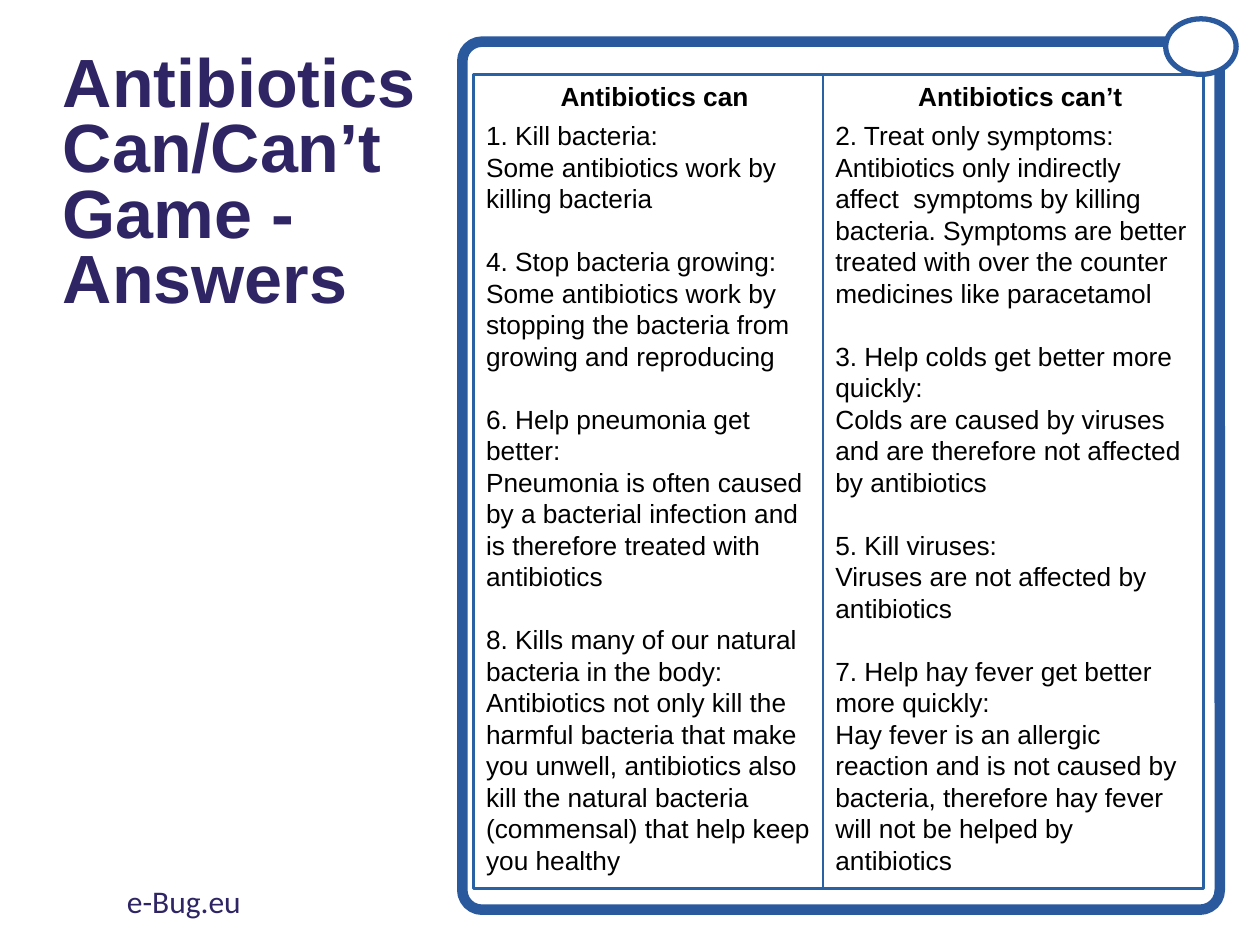
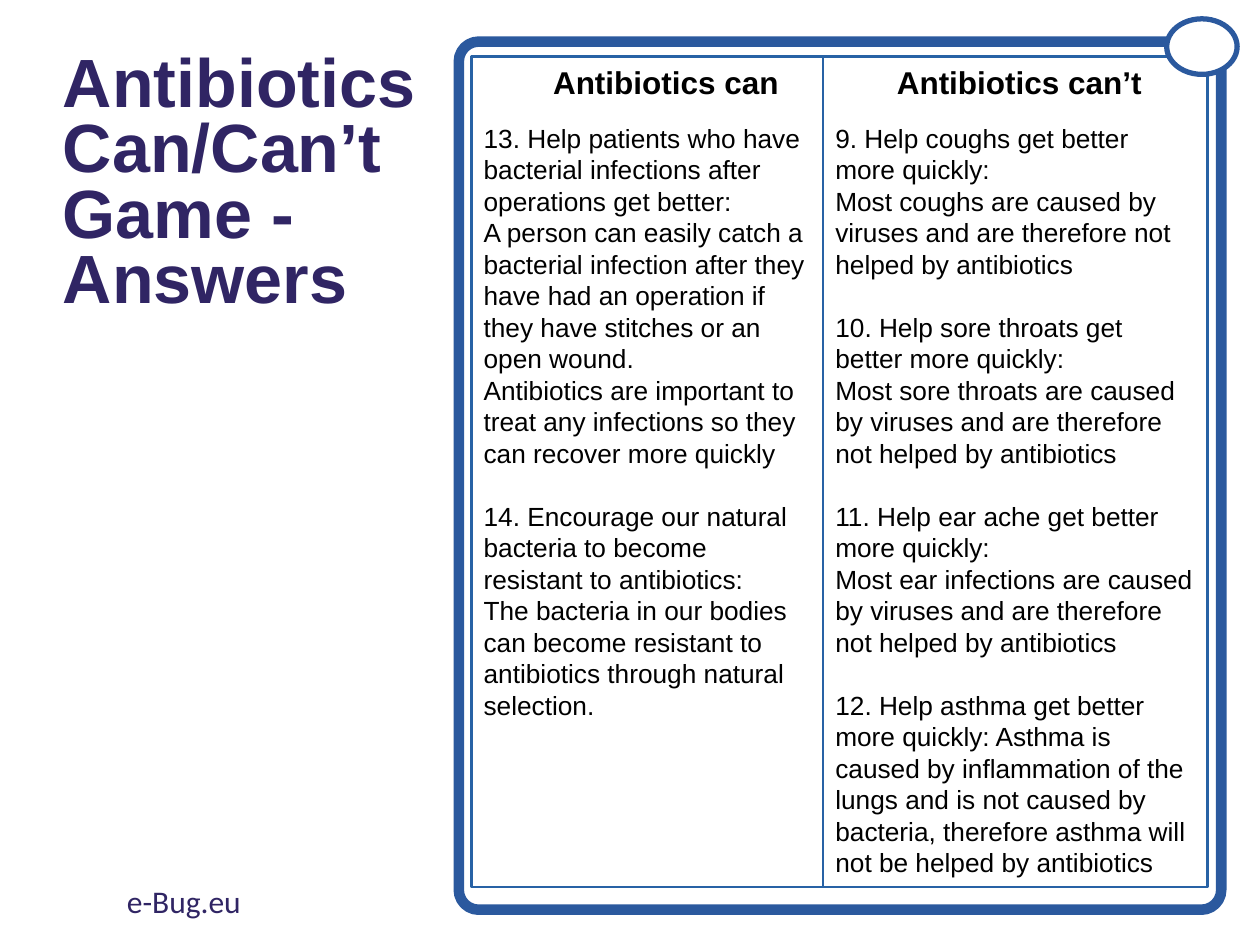
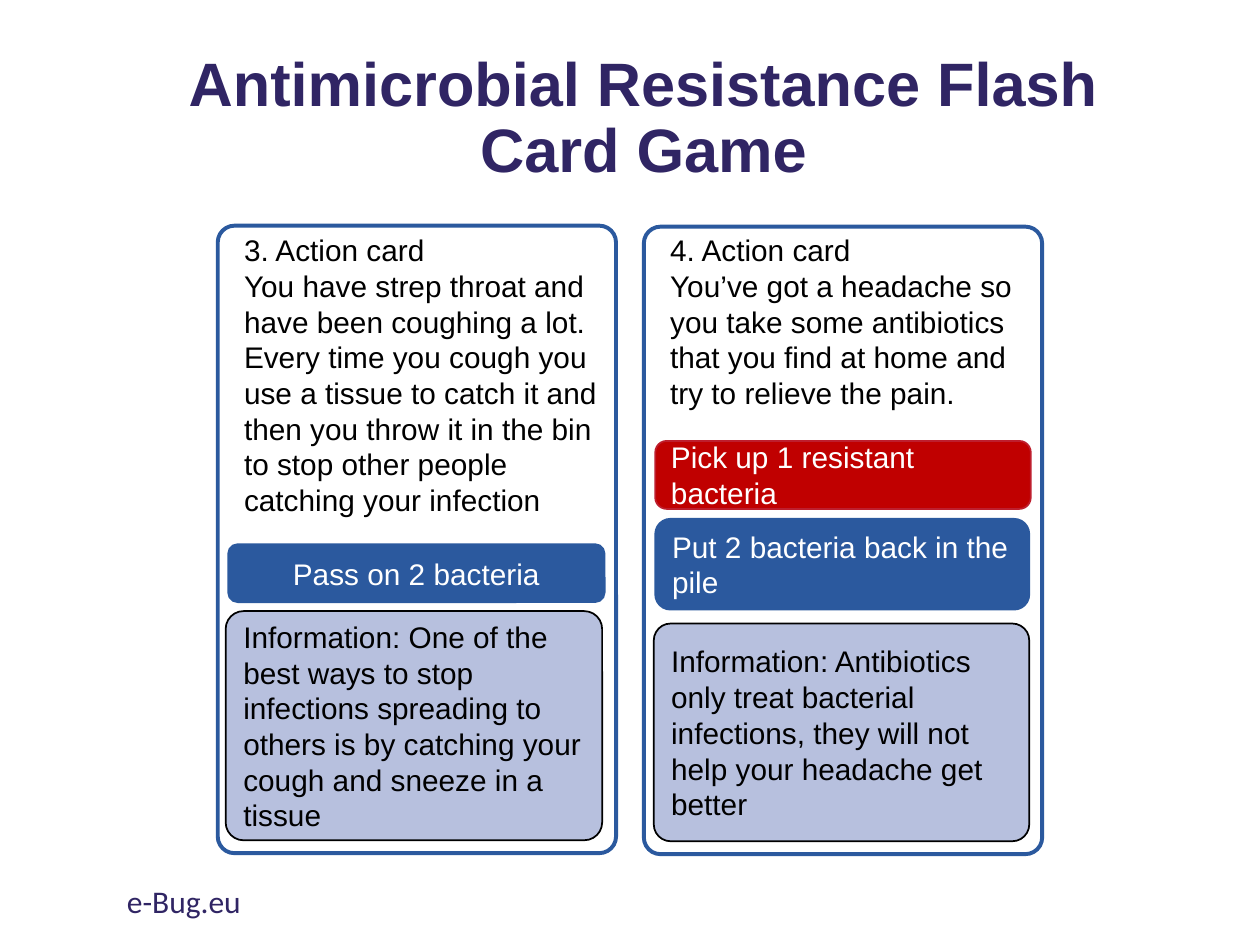
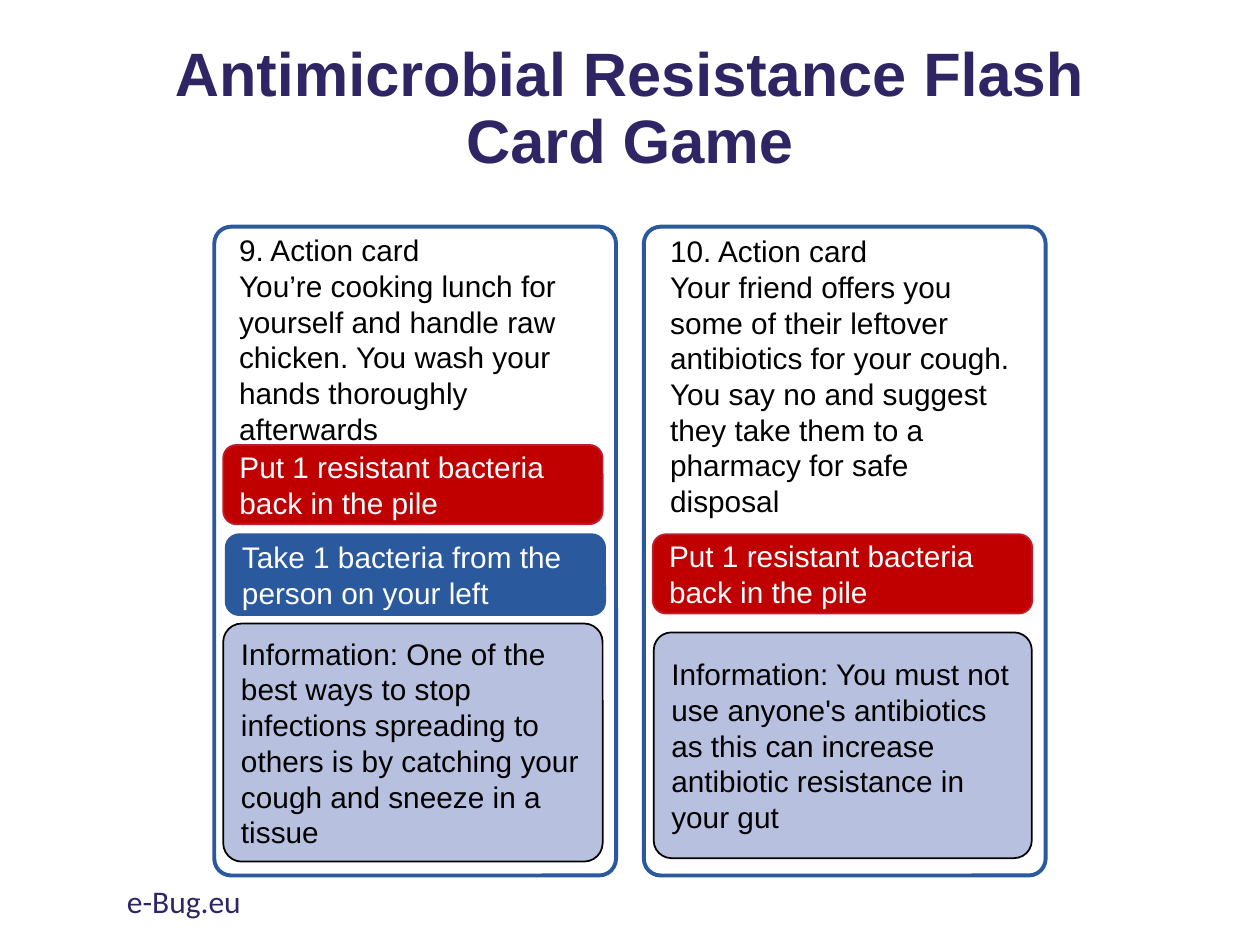
from pptx import Presentation
from pptx.dml.color import RGBColor
from pptx.enum.shapes import MSO_SHAPE
from pptx.enum.text import MSO_ANCHOR, MSO_AUTO_SIZE, PP_ALIGN
from pptx.util import Cm, Pt

RECT, ROUND, OVAL = MSO_SHAPE.RECTANGLE, MSO_SHAPE.ROUNDED_RECTANGLE, MSO_SHAPE.OVAL
TOP, MIDDLE = MSO_ANCHOR.TOP, MSO_ANCHOR.MIDDLE
LEFT, CENTER = PP_ALIGN.LEFT, PP_ALIGN.CENTER
GROW = MSO_AUTO_SIZE.SHAPE_TO_FIT_TEXT

NAVY, BLUE, GRID_BLUE = "302564", "2B599E", "2862A5"
RED, RED_LINE, LILAC = "C00000", "BE1E2D", "B7C0DE"
BLACK, WHITE = "000000", "FFFFFF"

BOX_STYLES = {  # fill, line, text colour, corner
    "red": (RED, RED_LINE, WHITE, 0.167),
    "blue": (BLUE, BLUE, WHITE, 0.167),
    "info": (LILAC, BLACK, BLACK, 0.078),
}


def rgb(value):
    return RGBColor.from_string(value)


class Deck:
    """Holds the presentation, its shared style and the current slide."""

    def __init__(self):
        self.prs = Presentation()
        self.prs.slide_width, self.prs.slide_height = Cm(25.4), Cm(19.05)
        self.s = None

    def new_slide(self):
        self.s = self.prs.slides.add_slide(self.prs.slide_layouts[6])

    def fill_text(self, tf, paragraphs, size, color=BLACK, bold=False, font="Arial",
                  align=LEFT, anchor=TOP, spacing=None, gap=0):
        """Fill a text frame; gap is the space in points between paragraphs."""
        tf.word_wrap = True
        tf.vertical_anchor = anchor
        for i, text in enumerate(paragraphs):
            p = tf.add_paragraph() if i else tf.paragraphs[0]
            p.text = text
            p.alignment = align
            if spacing:
                p.line_spacing = spacing
            if i and gap:
                p.space_before = Pt(gap)
            p.font.name, p.font.size, p.font.bold = font, Pt(size), bold
            p.font.color.rgb = rgb(color)

    def text(self, at, paragraphs, size, **style):
        tf = self.s.shapes.add_textbox(*map(Cm, at)).text_frame
        self.fill_text(tf, paragraphs, size, **style)
        return tf

    def shape(self, kind, at, line, width, fill=None, corner=None):
        sp = self.s.shapes.add_shape(kind, *map(Cm, at))
        sp.shadow.inherit = False
        if fill:
            sp.fill.solid()
            sp.fill.fore_color.rgb = rgb(fill)
        else:
            sp.fill.background()
        sp.line.color.rgb = rgb(line)
        sp.line.width = Pt(width)
        if corner:
            sp.adjustments[0] = corner
        return sp

    def title(self, at, text, size, align, spacing):
        self.text(at, [text], size, color=NAVY, bold=True, align=align,
                  anchor=MIDDLE, spacing=spacing)

    def footer(self):
        self.text((2.31, 17.65, 8.59, 1.02), ["e-Bug.eu"], 18, color=NAVY, font="Calibri")

    def column(self, at, header, header_at, header_size, inset, answers):
        tf = self.text(header_at, [header], header_size, bold=True)
        tf.word_wrap = False
        tf.auto_size = GROW
        tf = self.shape(RECT, at, GRID_BLUE, 1.5).text_frame
        tf.margin_top = Cm(inset)
        self.fill_text(tf, answers, 15, gap=18)

    def frame(self, left, width, oval_left):
        self.shape(ROUND, (left, 0.84, width, 17.5), BLUE, 6, corner=0.026)
        self.shape(OVAL, (oval_left, 0.38, 1.42, 1.12), BLUE, 3, fill=WHITE)

    def card(self, at, text_at, lines, boxes):
        self.shape(ROUND, at, BLUE, 2.25, corner=0.042)
        self.text(text_at, lines, 17).auto_size = GROW
        for style, box_at, text, align in boxes:
            fill, line, color, corner = BOX_STYLES[style]
            sp = self.shape(ROUND, box_at, line, 1, fill, corner)
            self.fill_text(sp.text_frame, [text], 17, color=color, align=align,
                           anchor=MIDDLE)

    def answers_slide(self, top, height, header_size, header_height, inset, columns, frame):
        self.new_slide()
        self.title((1.02, 0.74, 8.31, 6.02), "Antibiotics Can/Can’t Game - Answers",
                   39, LEFT, 0.8)
        for header, left, width, header_left, header_width, answers in columns:
            self.column((left, top, width, height), header,
                        (header_left, top, header_width, header_height),
                        header_size, inset, answers)
        self.frame(*frame)
        self.footer()

    def cards_slide(self, title_left, title_top, cards):
        self.new_slide()
        self.title((title_left, title_top, 21.89, 3.68),
                   "Antimicrobial Resistance Flash Card Game", 35, CENTER, 0.9)
        for card in cards:
            self.card(*card)
        self.footer()


CAN, CANT = "Antibiotics can", "Antibiotics can’t"
COUGH_INFO = ("Information: One of the best ways to stop infections spreading to others "
              "is by catching your cough and sneeze in a tissue")
PUT_BACK = "Put 1 resistant bacteria back in the pile"

CAN_1 = [
    "1. Kill bacteria:\nSome antibiotics work by killing bacteria",
    "4. Stop bacteria growing:\nSome antibiotics work by stopping the bacteria from "
    "growing and reproducing",
    "6. Help pneumonia get better:\nPneumonia is often caused by a bacterial infection "
    "and is therefore treated with antibiotics",
    "8. Kills many of our natural bacteria in the body:\nAntibiotics not only kill the "
    "harmful bacteria that make you unwell, antibiotics also kill the natural bacteria "
    "(commensal) that help keep you healthy",
]
CANT_1 = [
    "2. Treat only symptoms:\nAntibiotics only indirectly affect  symptoms by killing "
    "bacteria. Symptoms are better treated with over the counter medicines like paracetamol",
    "3. Help colds get better more quickly:\nColds are caused by viruses and are "
    "therefore not affected by antibiotics",
    "5. Kill viruses:\nViruses are not affected by antibiotics",
    "7. Help hay fever get better more quickly:\nHay fever is an allergic reaction and is "
    "not caused by bacteria, therefore hay fever will not be helped by antibiotics",
]
CAN_2 = [
    "13. Help patients who have bacterial infections after operations get better:\n"
    "A person can easily catch a bacterial infection after they have had an operation if "
    "they have stitches or an open wound.\nAntibiotics are important to treat any "
    "infections so they can recover more quickly",
    "14. Encourage our natural bacteria to become resistant to antibiotics:\n"
    "The bacteria in our bodies can become resistant to antibiotics through natural selection.",
]
CANT_2 = [
    f"{number}. Help {illness} get better more quickly:\nMost {cases} are caused by viruses "
    "and are therefore not helped by antibiotics"
    for number, illness, cases in [(9, "coughs", "coughs"),
                                   (10, "sore throats", "sore throats"),
                                   (11, "ear ache", "ear infections")]
] + [
    "12. Help asthma get better more quickly: Asthma is caused by inflammation of the lungs "
    "and is not caused by bacteria, therefore asthma will not be helped by antibiotics",
]

CARDS_3 = [
    ((4.39, 4.55, 8.03, 12.65), (4.67, 4.55, 7.98, 6.07),
     ["3. Action card",
      "You have strep throat and have been coughing a lot. Every time you cough you use a "
      "tissue to catch it and then you throw it in the bin to stop other people catching "
      "your infection"],
     [("blue", (4.6, 10.97, 7.59, 1.17), "Pass on 2 bacteria", CENTER),
      ("info", (4.55, 12.32, 7.59, 4.62), COUGH_INFO, LEFT)]),
    ((12.98, 4.57, 8.03, 12.65), (13.26, 4.55, 7.47, 3.89),
     ["4. Action card",
      "You’ve got a headache so you take some antibiotics that you find at home and try to "
      "relieve the pain."],
     [("red", (13.21, 8.89, 7.57, 1.37), "Pick up 1 resistant bacteria", LEFT),
      ("blue", (13.21, 10.46, 7.54, 1.83), "Put 2 bacteria back in the pile", LEFT),
      ("info", (13.18, 12.57, 7.57, 4.39),
       "Information: Antibiotics only treat bacterial infections, they will not help your "
       "headache get better", LEFT)]),
]
CARDS_4 = [
    ((4.32, 4.57, 8.1, 13.08), (4.57, 4.55, 8.05, 4.62),
     ["9. Action card",
      "You’re cooking lunch for yourself and handle raw chicken. You wash your hands "
      "thoroughly afterwards"],
     [("red", (4.5, 8.97, 7.65, 1.6), PUT_BACK, LEFT),
      ("blue", (4.55, 10.77, 7.65, 1.63), "Take 1 bacteria from the person on your left", LEFT),
      ("info", (4.5, 12.57, 7.65, 4.8), COUGH_INFO, LEFT)]),
    ((12.98, 4.57, 8.1, 13.08), (13.26, 4.57, 7.54, 6.1),
     ["10. Action card",
      "Your friend offers you some of their leftover antibiotics for your cough. You say no "
      "and suggest they take them to a pharmacy for safe disposal"],
     [("red", (13.16, 10.77, 7.65, 1.6), PUT_BACK, LEFT),
      ("info", (13.18, 12.75, 7.62, 4.55),
       "Information: You must not use anyone's antibiotics as this can increase antibiotic "
       "resistance in your gut", LEFT)]),
]


def main():
    deck = Deck()
    deck.answers_slide(1.5, 16.41, 15, 0.89, 0.91,
                       [(CAN, 9.55, 7.04, 11.05, 4.34, CAN_1),
                        (CANT, 16.59, 7.67, 18.26, 4.67, CANT_1)],
                       (9.32, 15.27, 23.5))
    deck.answers_slide(1.14, 16.74, 18, 1.02, 1.32,
                       [(CAN, 9.5, 7.09, 10.9, 5.11, CAN_2),
                        (CANT, 16.59, 7.75, 17.83, 5.51, CANT_2)],
                       (9.25, 15.37, 23.52))
    deck.cards_slide(2.03, 0.58, CARDS_3)
    deck.cards_slide(1.75, 0.38, CARDS_4)
    deck.prs.save("out.pptx")


if __name__ == "__main__":
    main()
